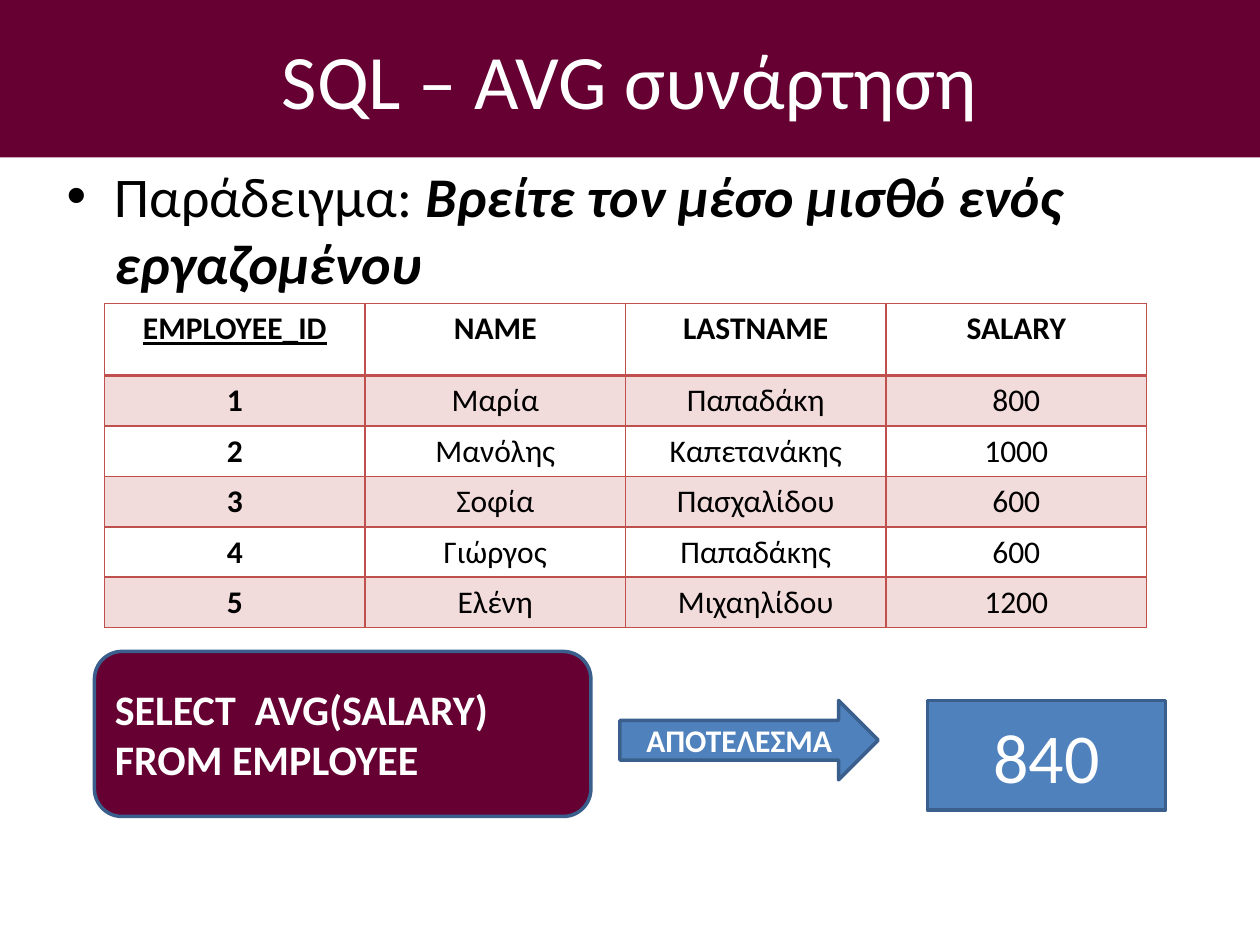
from lxml.etree import SubElement
from pptx import Presentation
from pptx.dml.color import RGBColor
from pptx.enum.shapes import MSO_SHAPE as Shape
from pptx.enum.text import MSO_ANCHOR as Anchor, PP_ALIGN as Align
from pptx.oxml.ns import qn
from pptx.util import Inches, Pt

WINE, BLUE, EDGE, RED, PINK = "660033", "4F81BD", "3A5F8C", "C0504D", "F2DCDB"
WHITE, BLACK = "FFFFFF", "000000"

TITLE = "SQL – AVG συνάρτηση"
TASK = [("Παράδειγμα: ", False), ("Βρείτε τον μέσο μισθό ενός εργαζομένου", True)]
EMPLOYEES = [
    ("EMPLOYEE_ID", "NAME", "LASTNAME", "SALARY"),
    ("1", "Μαρία", "Παπαδάκη", "800"),
    ("2", "Μανόλης", "Καπετανάκης", "1000"),
    ("3", "Σοφία", "Πασχαλίδου", "600"),
    ("4", "Γιώργος", "Παπαδάκης", "600"),
    ("5", "Ελένη", "Μιχαηλίδου", "1200"),
]
QUERY_FLOW = [
    (Shape.ROUNDED_RECTANGLE, (0.75, 5.17, 3.94, 1.31), WINE,
     "SELECT  AVG(SALARY)\nFROM EMPLOYEE", 24, True, Align.LEFT),
    (Shape.RIGHT_ARROW, (4.92, 5.56, 2.05, 0.63), BLUE, "ΑΠΟΤΕΛΕΣΜΑ", 18, True, Align.CENTER),
    (Shape.RECTANGLE, (7.36, 5.56, 1.89, 0.87), BLUE, "840", 40, False, Align.CENTER),
]
HEADER_HEIGHT, ROW_HEIGHT = 0.57, 0.4


def color(value):
    return RGBColor.from_string(value)


def paint(fill, value):
    fill.solid()
    fill.fore_color.rgb = color(value)


def style(span, size, value, bold=False):
    span.font.name = "Calibri"
    span.font.size = Pt(size)
    span.font.bold = bold
    span.font.color.rgb = color(value)


def write(frame, text, size, value, bold=False, align=Align.CENTER):
    frame.text = text
    for para in frame.paragraphs:
        para.alignment = align
        for span in para.runs:
            style(span, size, value, bold)


def add_border(cell, side, width):
    line = SubElement(cell._tc.get_or_add_tcPr(), qn(f"a:ln{side}"), w=str(Pt(width)))
    solid = SubElement(line, qn("a:solidFill"))
    SubElement(solid, qn("a:srgbClr"), val=RED)


def add_title(page):
    title = page.shapes.title
    title.left, title.top = Inches(0), Inches(0)
    title.width, title.height = Inches(10), Inches(1.25)
    paint(title.fill, WINE)
    write(title.text_frame, TITLE, 44, WHITE)
    title.text_frame.vertical_anchor = Anchor.MIDDLE


def add_task(page):
    box = page.shapes.add_textbox(*map(Inches, (0.43, 1.23, 9, 1.15)))
    box.text_frame.word_wrap = True
    para = box.text_frame.paragraphs[0]
    para.space_before = Pt(6.4)
    for text, strong in TASK:
        span = para.add_run()
        span.text = text
        style(span, 32, BLACK, strong)
        span.font.italic = strong
    props = para._p.get_or_add_pPr()
    props.set("marL", str(Inches(0.38)))
    props.set("indent", str(-Inches(0.38)))
    SubElement(props, qn("a:buFont"), typeface="Arial")
    SubElement(props, qn("a:buChar"), char="•")


def add_employees(page):
    rows, cols = len(EMPLOYEES), len(EMPLOYEES[0])
    height = HEADER_HEIGHT + (rows - 1) * ROW_HEIGHT
    table = page.shapes.add_table(
        rows, cols, *map(Inches, (0.83, 2.41, 8.27, height))).table
    table.first_row = table.horz_banding = False
    for r, record in enumerate(EMPLOYEES):
        table.rows[r].height = Inches(ROW_HEIGHT if r else HEADER_HEIGHT)
        for c, text in enumerate(record):
            cell = table.cell(r, c)
            write(cell.text_frame, text, 18, BLACK, r == 0 or c == 0)
            for side in "LRTB":
                heavy = (r, side) in ((0, "B"), (1, "T"))
                add_border(cell, side, 2 if heavy else 1)
            if r % 2:
                paint(cell.fill, PINK)
            else:
                cell.fill.background()
    table.cell(0, 0).text_frame.paragraphs[0].runs[0].font.underline = True


def add_query_flow(page):
    for kind, place, fill, text, size, bold, align in QUERY_FLOW:
        shape = page.shapes.add_shape(kind, *map(Inches, place))
        shape.shadow.inherit = False
        paint(shape.fill, fill)
        shape.line.color.rgb = color(EDGE)
        shape.line.width = Pt(2)
        shape.text_frame.word_wrap = True
        shape.text_frame.vertical_anchor = Anchor.MIDDLE
        write(shape.text_frame, text, size, WHITE, bold, align)


def main():
    deck = Presentation()
    deck.slide_width, deck.slide_height = Inches(10), Inches(7.5)
    page = deck.slides.add_slide(deck.slide_layouts[5])
    add_title(page)
    add_task(page)
    add_employees(page)
    add_query_flow(page)
    deck.save("out.pptx")


if __name__ == "__main__":
    main()
